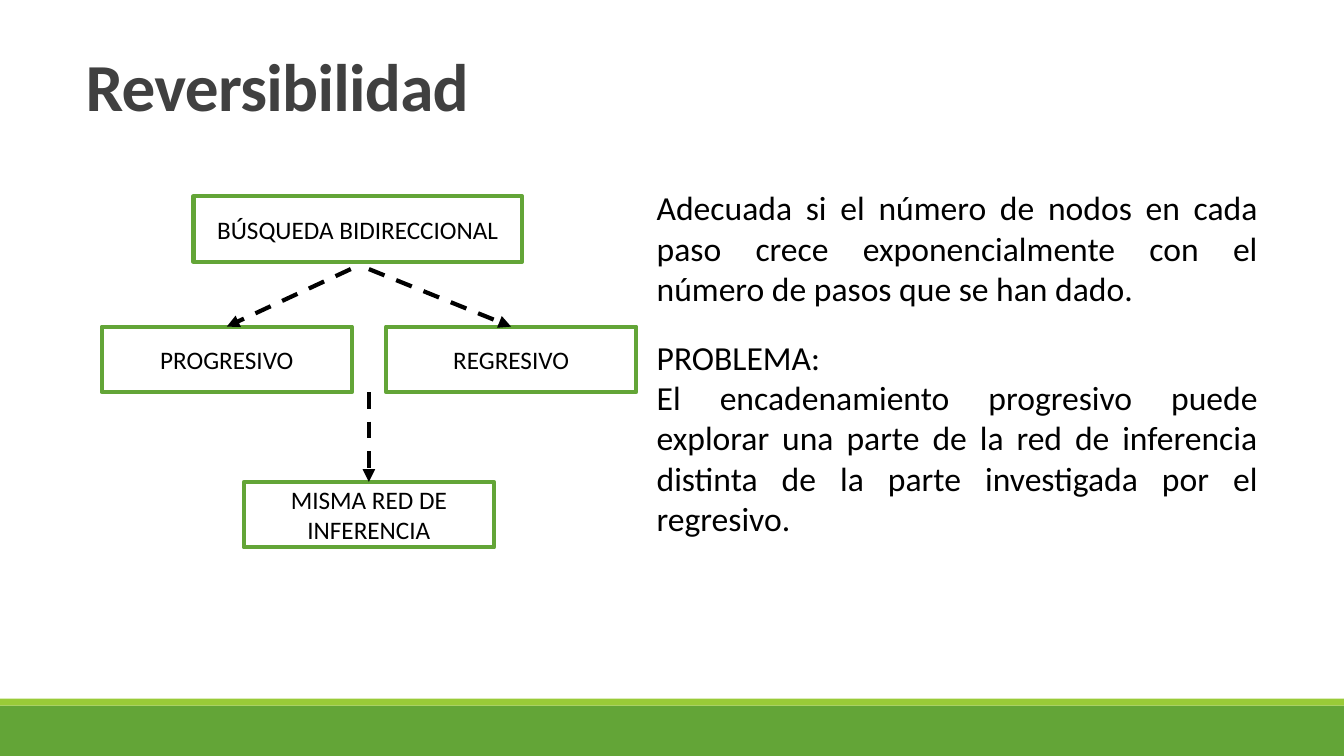
"""Build the slide on reversibility and bidirectional search."""
from dataclasses import dataclass

from lxml.etree import SubElement
from pptx import Presentation
from pptx.dml.color import RGBColor
from pptx.enum.dml import MSO_LINE_DASH_STYLE as Dash
from pptx.enum.shapes import MSO_CONNECTOR as Connector, MSO_SHAPE as Preset
from pptx.enum.text import MSO_ANCHOR as Anchor, PP_ALIGN as Align
from pptx.oxml.ns import qn
from pptx.shapes.autoshape import Shape
from pptx.slide import Slide
from pptx.text.text import TextFrame
from pptx.util import Pt


@dataclass(frozen=True)
class Theme:
    font: str = "Calibri"
    green: str = "63A537"
    lime: str = "99CB38"
    paper: str = "FFFFFF"
    ink: str = "000000"
    heading: str = "404040"
    title_size: float = 48
    body_size: float = 24
    node_size: float = 18
    stroke: float = 3


@dataclass(frozen=True)
class Box:
    left: float
    top: float
    width: float
    height: float

    @property
    def center(self) -> float:
        return self.left + self.width / 2

    @property
    def bottom(self) -> float:
        return self.top + self.height

    def lengths(self) -> tuple[Pt, Pt, Pt, Pt]:
        return Pt(self.left), Pt(self.top), Pt(self.width), Pt(self.height)


@dataclass(frozen=True)
class Node:
    label: str
    box: Box


@dataclass(frozen=True)
class Arrow:
    start: tuple[float, float]
    end: tuple[float, float]


@dataclass(frozen=True)
class Passage:
    text: str
    box: Box


THEME = Theme()
SLIDE_WIDTH, SLIDE_HEIGHT = 960, 540
NODE_WIDTH, NODE_HEIGHT = 178.6, 46.8
BRANCH_TOP, ARROW_TOP = 233.3, 192.2

BANDS = (
    (Box(0, 504, SLIDE_WIDTH, 36), THEME.green),
    (Box(0, 499, SLIDE_WIDTH, 5), THEME.lime),
)
TITLE = Passage("Reversibilidad", Box(54, 36.7, 851, 103))
SEARCH = Node("BÚSQUEDA BIDIRECCIONAL", Box(138.2, 140.2, 234.7, NODE_HEIGHT))
FORWARD = Node("PROGRESIVO", Box(72.7, BRANCH_TOP, NODE_WIDTH, NODE_HEIGHT))
BACKWARD = Node("REGRESIVO", Box(275.8, BRANCH_TOP, NODE_WIDTH, NODE_HEIGHT))
NETWORK = Node("MISMA RED DE INFERENCIA", Box(174.2, 344.2, NODE_WIDTH, NODE_HEIGHT))
NODES = (SEARCH, FORWARD, BACKWARD, NETWORK)
ARROWS = (
    Arrow((250.6, ARROW_TOP), (FORWARD.box.center, BRANCH_TOP)),
    Arrow((NETWORK.box.center, ARROW_TOP), (BACKWARD.box.center, BRANCH_TOP)),
    Arrow((NETWORK.box.center, FORWARD.box.bottom), (NETWORK.box.center, NETWORK.box.top)),
)
PASSAGES = (
    Passage(
        "Adecuada si el número de nodos en cada paso crece exponencialmente "
        "con el número de pasos que se han dado.",
        Box(462, 130.3, 443.5, 94.5),
    ),
    Passage(
        "PROBLEMA:\nEl encadenamiento progresivo puede explorar una parte de la red "
        "de inferencia distinta de la parte investigada por el regresivo.",
        Box(462, 236.9, 443.5, 152.7),
    ),
)


def write(frame: TextFrame, text: str, size: float, color: str, align: Align) -> None:
    """Fill a text frame and format all of its runs."""
    frame.word_wrap = True
    frame.text = text
    for paragraph in frame.paragraphs:
        paragraph.alignment = align
        for run in paragraph.runs:
            run.font.name = THEME.font
            run.font.size = Pt(size)
            run.font.color.rgb = RGBColor.from_string(color)


def draw_rectangle(slide: Slide, box: Box, fill: str) -> Shape:
    """Draw a plain filled rectangle without outline or shadow."""
    rectangle = slide.shapes.add_shape(Preset.RECTANGLE, *box.lengths())
    rectangle.shadow.inherit = False
    rectangle.fill.solid()
    rectangle.fill.fore_color.rgb = RGBColor.from_string(fill)
    rectangle.line.fill.background()
    return rectangle


def draw_node(slide: Slide, node: Node) -> None:
    """Draw an outlined box with its centred label."""
    frame = draw_rectangle(slide, node.box, THEME.paper)
    frame.line.color.rgb = RGBColor.from_string(THEME.green)
    frame.line.width = Pt(THEME.stroke)
    frame.text_frame.vertical_anchor = Anchor.MIDDLE
    write(frame.text_frame, node.label, THEME.node_size, THEME.ink, Align.CENTER)


def draw_arrow(slide: Slide, arrow: Arrow) -> None:
    """Draw a dashed line with a triangular head at its end."""
    ends = (Pt(value) for value in arrow.start + arrow.end)
    link = slide.shapes.add_connector(Connector.STRAIGHT, *ends)
    link.line.color.rgb = RGBColor.from_string(THEME.ink)
    link.line.width = Pt(THEME.stroke)
    link.line.dash_style = Dash.DASH
    properties = link._element.spPr
    SubElement(properties.find(qn("a:ln")), qn("a:tailEnd"), type="triangle")
    SubElement(properties, qn("a:effectLst"))


def draw_passage(slide: Slide, passage: Passage, size: float, color: str) -> TextFrame:
    """Draw a justified text box and return its text frame."""
    frame = slide.shapes.add_textbox(*passage.box.lengths()).text_frame
    write(frame, passage.text, size, color, Align.JUSTIFY)
    return frame


def draw_title(slide: Slide) -> None:
    """Draw the bold, slightly tightened heading."""
    heading = draw_passage(slide, TITLE, THEME.title_size, THEME.heading).paragraphs[0]
    heading.line_spacing = 0.85
    heading.runs[0].font.bold = True
    heading.runs[0]._r.get_or_add_rPr().set("spc", "-50")


def main() -> None:
    """Assemble and save the slide."""
    deck = Presentation()
    deck.slide_width, deck.slide_height = Pt(SLIDE_WIDTH), Pt(SLIDE_HEIGHT)
    slide = deck.slides.add_slide(deck.slide_layouts[6])
    for box, fill in BANDS:
        draw_rectangle(slide, box, fill)
    draw_title(slide)
    for node in NODES:
        draw_node(slide, node)
    for arrow in ARROWS:
        draw_arrow(slide, arrow)
    for passage in PASSAGES:
        draw_passage(slide, passage, THEME.body_size, THEME.ink)
    deck.save("out.pptx")


if __name__ == "__main__":
    main()
